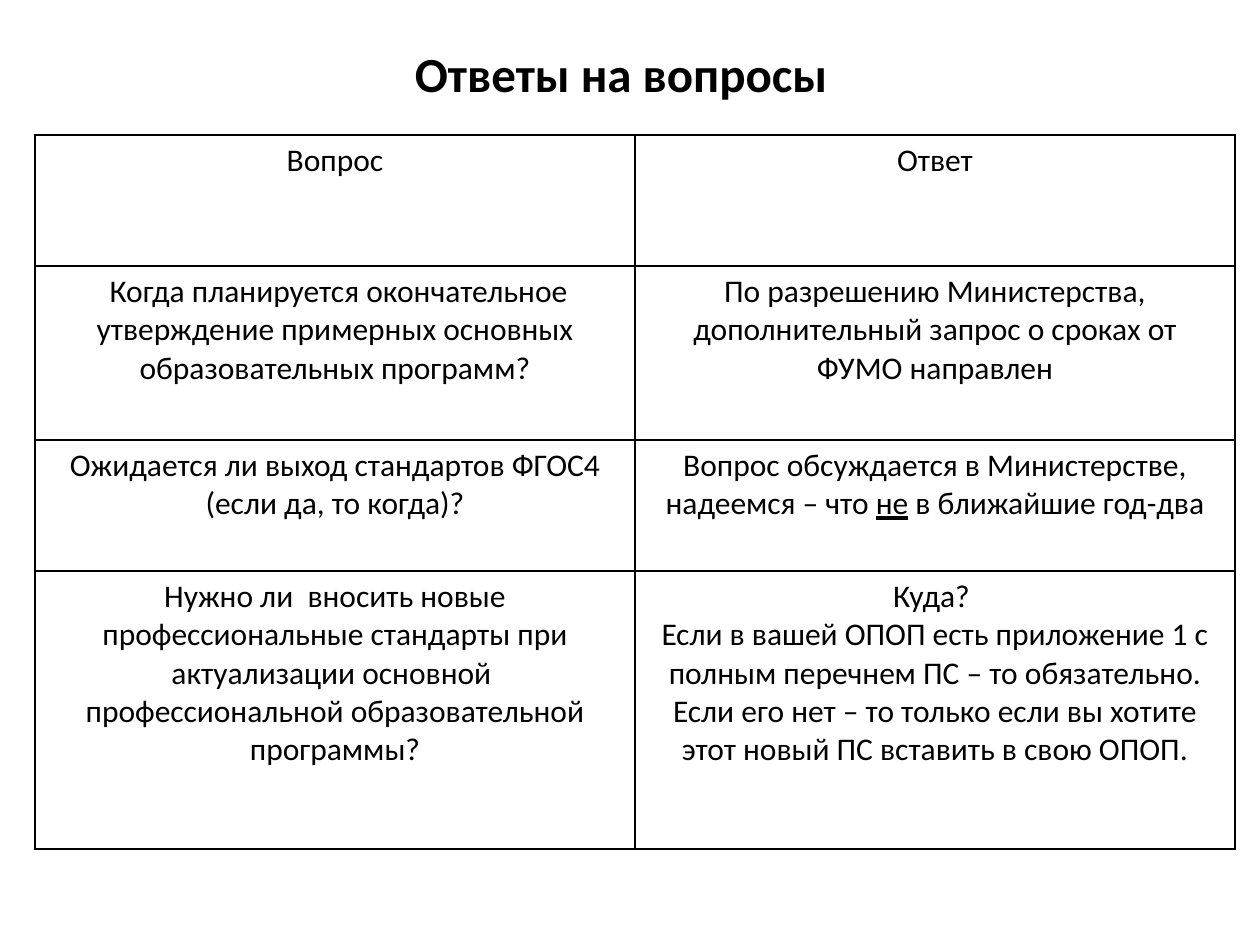
from lxml.etree import SubElement
from pptx import Presentation
from pptx.dml.color import RGBColor
from pptx.enum.text import MSO_ANCHOR, PP_ALIGN
from pptx.oxml.ns import qn
from pptx.util import Pt

PX = 914400 // 126  # EMU in one px
THEME = {
    "font": "Calibri",
    "ink": "000000",
    "title": 28,
    "body": 18,
    "border": 1,
}
TITLE = "Ответы на вопросы"
TITLE_BOX = (54, 37, 1134, 89)
TABLE_AT = (35, 135)
COL_W = 600
ROW_H = (131, 174, 131, 278)

# A cell is a list of paragraphs, a paragraph a list of (text, underlined) runs
QUESTIONS = [
    "Вопрос",
    " Когда планируется окончательное утверждение примерных основных образовательных программ?",
    "Ожидается ли выход стандартов ФГОС4 (если да, то когда)?",
    "Нужно ли  вносить новые профессиональные стандарты при актуализации основной "
    " профессиональной образовательной программы?",
]
ANSWERS = [
    [[("Ответ", False)]],
    [[("По разрешению Министерства, дополнительный запрос о сроках от ФУМО направлен", False)]],
    [[("Вопрос обсуждается в Министерстве, надеемся – что ", False),
      ("не", True),
      (" в ближайшие год-два", False)]],
    [[("Куда? ", False)],
     [("Если в вашей ОПОП есть приложение 1 с полным перечнем ПС – то обязательно.", False)],
     [("Если его нет – то только если вы хотите этот новый ПС вставить в свою ОПОП.", False)]],
]


def px(n):
    return n * PX


def set_attrs(obj, values):
    for name, value in values.items():
        setattr(obj, name, value)


def add_run(p, text, **fmt):
    r = p.add_run()
    r.text = text
    set_attrs(r.font, {"name": THEME["font"], **fmt})
    r.font.color.rgb = RGBColor.from_string(THEME["ink"])


def add_title(s):
    sp = s.shapes.title
    set_attrs(sp, dict(zip(("left", "top", "width", "height"), map(px, TITLE_BOX))))
    tf = sp.text_frame
    set_attrs(tf, {"vertical_anchor": MSO_ANCHOR.TOP, "word_wrap": True})
    p = tf.paragraphs[0]
    p.alignment = PP_ALIGN.CENTER
    add_run(p, TITLE, size=Pt(THEME["title"]), bold=True)


def set_borders(cell):
    tc_pr = cell._tc.get_or_add_tcPr()
    for i, side in enumerate(("lnL", "lnR", "lnT", "lnB")):
        ln = tc_pr.makeelement(qn(f"a:{side}"), {"w": str(Pt(THEME["border"]))})
        fill = SubElement(ln, qn("a:solidFill"))
        SubElement(fill, qn("a:srgbClr"), val=THEME["ink"])
        tc_pr.insert(i, ln)


def fill_cell(cell, paragraphs):
    cell.fill.background()
    set_borders(cell)
    tf = cell.text_frame
    for i, runs in enumerate(paragraphs):
        p = tf.add_paragraph() if i else tf.paragraphs[0]
        p.alignment = PP_ALIGN.CENTER
        for text, underlined in runs:
            add_run(p, text, size=Pt(THEME["body"]), underline=underlined)


def add_answers_table(s):
    rows = [([[(q, False)]], a) for q, a in zip(QUESTIONS, ANSWERS)]
    frame = s.shapes.add_table(len(rows), 2, *map(px, (*TABLE_AT, 2 * COL_W, sum(ROW_H))))
    table = frame.table
    set_attrs(table, {"first_row": False, "horz_banding": False})
    for col in table.columns:
        col.width = px(COL_W)
    for i, cells in enumerate(rows):
        table.rows[i].height = px(ROW_H[i])
        for j, paragraphs in enumerate(cells):
            fill_cell(table.cell(i, j), paragraphs)


def main():
    prs = Presentation()
    set_attrs(prs, {"slide_width": px(1260), "slide_height": px(945)})
    # Title-only layout
    s = prs.slides.add_slide(prs.slide_layouts[5])
    add_title(s)
    add_answers_table(s)
    prs.save("out.pptx")


if __name__ == "__main__":
    main()
